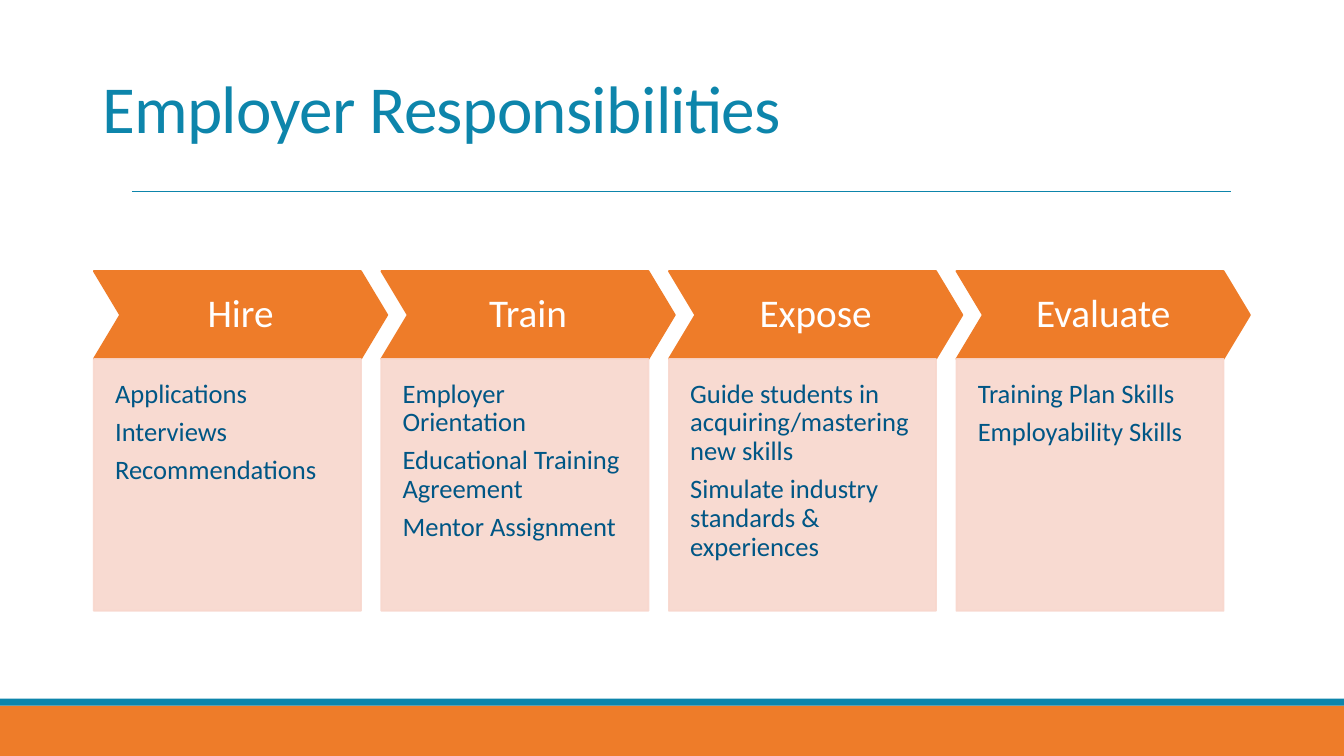
from pptx import Presentation
from pptx import util as u
from pptx.dml.color import RGBColor
from pptx.enum import shapes, text
from pptx.oxml import xmlchemy
from lxml import etree

Pt = u.Pt
TEAL = RGBColor(0x0D, 0x85, 0xAB)
ORANGE = RGBColor(0xEE, 0x7C, 0x29)
PINK = RGBColor(0xF8, 0xD7, 0xCD)
NAVY = RGBColor(0x00, 0x56, 0x85)
WHITE = RGBColor(0xFF, 0xFF, 0xFF)
NS = "{http://schemas.openxmlformats.org/drawingml/2006/main}"
KIND = shapes.MSO_SHAPE

STEPS = [
    ("Hire", ["Applications", "Interviews", "Recommendations"]),
    ("Train", ["Employer Orientation", "Educational Training Agreement",
               "Mentor Assignment"]),
    ("Expose", ["Guide students in acquiring/mastering new skills",
                "Simulate industry standards & experiences"]),
    ("Evaluate", ["Training Plan Skills", "Employability Skills"]),
]
TITLE = dict(size=48, color=TEAL, align=text.PP_ALIGN.LEFT, lead=0.85,
             after=0, anchor=text.MSO_ANCHOR.MIDDLE,
             inset=(7.2, 3.6, 7.2, 3.6))
HEAD = dict(size=28, color=WHITE, align=text.PP_ALIGN.CENTER, lead=0.9,
            after=9.8, anchor=text.MSO_ANCHOR.MIDDLE, inset=(0, 8, 0, 8))
BODY = dict(size=19, color=NAVY, align=text.PP_ALIGN.LEFT, lead=0.9,
            after=6.65, anchor=text.MSO_ANCHOR.TOP,
            inset=(15.2, 15.2, 15.2, 30))


def assign(item, values):
    for key, value in values.items():
        setattr(item, key, value)


def write(shape, lines, form):
    frame = shape.text_frame
    left, top, right, bottom = map(Pt, form["inset"])
    assign(frame, dict(word_wrap=True, vertical_anchor=form["anchor"],
                       margin_left=left, margin_top=top,
                       margin_right=right, margin_bottom=bottom))
    for i, line in enumerate(lines):
        para = frame.add_paragraph() if i else frame.paragraphs[0]
        assign(para, dict(alignment=form["align"], line_spacing=form["lead"],
                          space_after=Pt(form["after"])))
        run = para.add_run()
        run.text = line
        assign(run.font, dict(name="Calibri", size=Pt(form["size"])))
        run.font.color.rgb = form["color"]
    return frame


def block(slide, kind, box, color, edge=0):
    shape = slide.shapes.add_shape(kind, *map(Pt, box))
    shape.shadow.inherit = False
    shape.fill.solid()
    shape.fill.fore_color.rgb = color
    if edge:
        shape.line.color.rgb = color
        shape.line.width = Pt(edge)
    else:
        shape.line.fill.background()
    return shape


def fade(shape, share):
    for tint in shape.element.spPr.iter(NS + "srgbClr"):
        etree.SubElement(tint, NS + "alpha").set("val", str(share * 1000))


def footer(slide, box):
    x, y, w, h = box
    rim = 5
    block(slide, KIND.RECTANGLE, (x, y + rim, w, h - rim), ORANGE)
    block(slide, KIND.RECTANGLE, (x, y, w, rim), TEAL)


def header(slide, box):
    x, y, w, h = box
    label = slide.shapes.add_textbox(*map(Pt, box))
    frame = write(label, ["Employer Responsibilities"], TITLE)
    frame.paragraphs[0].runs[0].font._element.set("spc", "-50")
    level = y + h + 3.6
    rule = slide.shapes.add_connector(
        shapes.MSO_CONNECTOR.STRAIGHT,
        *map(Pt, (x + 28.3, level, x + w - 15, level)))
    rule.line.color.rgb = TEAL
    rule.line.width = Pt(0.5)
    etree.SubElement(rule.element.spPr, NS + "effectLst")


def step(slide, box, name, tasks):
    x, y, w, h = box
    top, slant = 62.8, 0.3
    arrow = block(slide, KIND.CHEVRON, (x, y, w + top * slant, top),
                  ORANGE, 1.25)
    arrow.adjustments[0] = slant
    write(arrow, [name], HEAD)
    panel = block(slide, KIND.RECTANGLE, (x, y + top, w, h - top), PINK, 1.25)
    fade(panel, 90)
    write(panel, tasks, BODY)


def process(slide, box):
    x, y, w, h = box
    gap = 14.6
    wide = (w - gap * (len(STEPS) - 1)) / len(STEPS)
    for i, (name, tasks) in enumerate(STEPS):
        step(slide, (x + i * (wide + gap), y, wide, h), name, tasks)


def main():
    deck = Presentation()
    assign(deck, dict(slide_width=Pt(960), slide_height=Pt(540)))
    slide = deck.slides.add_slide(deck.slide_layouts[6])
    footer(slide, (0, 499, 960, 41))
    header(slide, (66, 29, 828, 104))
    process(slide, (67, 193.6, 807, 242.8))
    deck.save("out.pptx")


if __name__ == "__main__":
    main()
